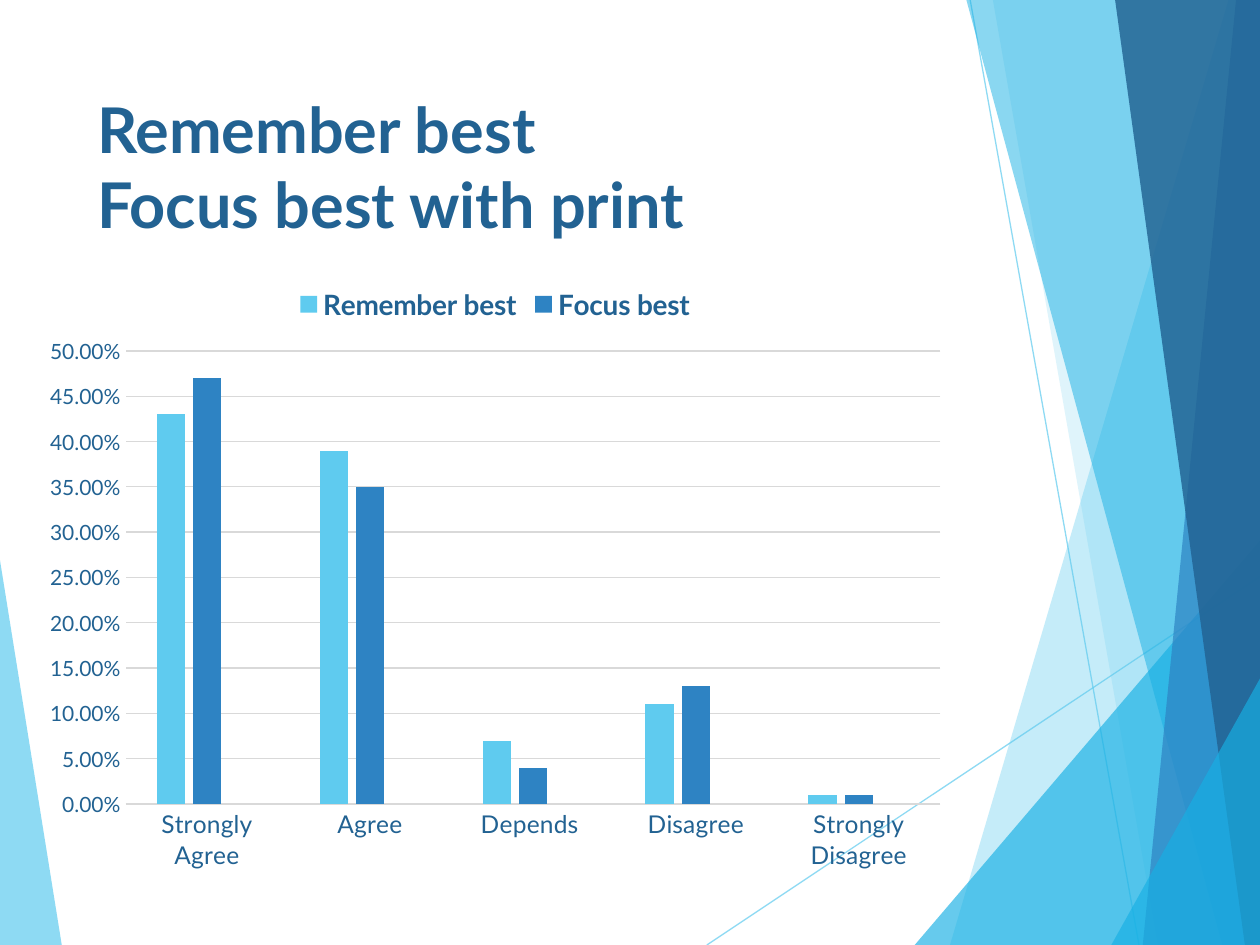
from collections import namedtuple

from lxml import etree
from pptx import Presentation
from pptx.chart.data import CategoryChartData
from pptx.dml.color import RGBColor
from pptx.enum.chart import XL_CHART_TYPE, XL_LEGEND_POSITION, XL_TICK_MARK
from pptx.enum.shapes import MSO_CONNECTOR
from pptx.enum.text import MSO_ANCHOR, PP_ALIGN
from pptx.oxml import parse_xml
from pptx.oxml.ns import nsdecls, qn
from pptx.util import Inches, Pt

COLUMN_CLUSTERED = XL_CHART_TYPE.COLUMN_CLUSTERED
LEGEND_TOP = XL_LEGEND_POSITION.TOP
NO_TICK = XL_TICK_MARK.NONE
STRAIGHT = MSO_CONNECTOR.STRAIGHT
TOP, LEFT = MSO_ANCHOR.TOP, PP_ALIGN.LEFT

SKY = RGBColor(0x5F, 0xCB, 0xEF)
CYAN = RGBColor(0x17, 0xB0, 0xE4)
BLUE = RGBColor(0x2E, 0x83, 0xC3)
NAVY = RGBColor(0x22, 0x62, 0x92)
GREEN = RGBColor(0x42, 0xD0, 0xA2)
GRID_GREY = RGBColor(0xD9, 0xD9, 0xD9)
FONT = "Lato"

Box = namedtuple("Box", "left top width height")

# Background: corner points as shares of the slide, colour, opacity in percent
LEFT_FACET = ([(0, 0.593), (0.049, 1), (0, 1)], SKY, 70)
RIGHT_FACETS = [
    ([(0.975, 0), (0.754, 1), (1, 1), (1, 0)], SKY, 36),
    ([(0.788, 0), (0.919, 1), (1, 1), (1, 0)], SKY, 20),
    ([(0.726, 1), (1, 0.572), (1, 1)], CYAN, 66),
    ([(0.767, 0), (0.97, 1), (1, 1), (1, 0)], CYAN, 50),
    ([(0.981, 0), (0.907, 1), (1, 1), (1, 0)], BLUE, 70),
    ([(0.885, 0), (0.988, 1), (1, 1), (1, 0)], NAVY, 82),
    ([(0.882, 1), (1, 0.718), (1, 1)], CYAN, 66),
]
RAYS = [((0.561, 1), (1, 0.61)), ((0.77, 0), (0.904, 1))]

# Survey results
ANSWERS = ["Strongly Agree", "Agree", "Depends ", "Disagree", "Strongly Disagree"]
RESULTS = [
    ("Remember best", [0.43, 0.39, 0.07, 0.11, 0.01], SKY),
    ("Focus best", [0.47, 0.35, 0.04, 0.13, 0.01], BLUE),
    ("Series 3", [None] * 5, GREEN),
]


def place(box, point):
    return (int(box.left + point[0] * box.width), int(box.top + point[1] * box.height))


def share(box, left, top, width, height):
    return Box(*place(box, (left, top)), int(width * box.width), int(height * box.height))


def set_opacity(shape, percent):
    for colour in shape._element.spPr.iter(qn("a:srgbClr")):
        etree.SubElement(colour, qn("a:alpha"), val=str(percent * 1000))


def style_font(font, size, colour, bold=False):
    font.name, font.size, font.bold = FONT, Pt(size), bold
    font.color.rgb = colour


def add_facet(slide, box, points, colour, opacity):
    start, *others = [place(box, point) for point in points]
    builder = slide.shapes.build_freeform(*start)
    builder.add_line_segments(others, close=True)
    facet = builder.convert_to_shape()
    facet.shadow.inherit = False
    facet.fill.solid()
    facet.fill.fore_color.rgb = colour
    facet.line.fill.background()
    set_opacity(facet, opacity)


def add_ray(slide, box, start, end):
    ray = slide.shapes.add_connector(STRAIGHT, *place(box, start), *place(box, end))
    ray.line.color.rgb = SKY
    ray.line.width = Pt(0.75)
    set_opacity(ray, 70)
    etree.SubElement(ray._element.spPr, qn("a:effectLst"))


def add_background(slide, box):
    add_facet(slide, box, *LEFT_FACET)
    for start, end in RAYS:
        add_ray(slide, box, start, end)
    for facet in RIGHT_FACETS:
        add_facet(slide, box, *facet)


def add_title(slide, box):
    title = slide.shapes.title
    title.left, title.top, title.width, title.height = box
    frame = title.text_frame
    frame.text = "Remember best\vFocus best with print"
    frame.word_wrap = True
    frame.vertical_anchor = TOP
    para = frame.paragraphs[0]
    para.alignment = LEFT
    para.line_spacing = 1.0
    for span in para.runs:
        style_font(span.font, 36, NAVY, bold=True)
    # Bring the title in front of the background
    slide.shapes._spTree.append(title._element)


def style_axes(chart):
    category_axis, value_axis = chart.category_axis, chart.value_axis
    for axis, size in ((category_axis, 14), (value_axis, 12)):
        axis.major_tick_mark = axis.minor_tick_mark = NO_TICK
        style_font(axis.tick_labels.font, size, NAVY)
    value_axis.minimum_scale, value_axis.maximum_scale = 0, 0.5
    value_axis.major_unit = 0.05
    value_axis.tick_labels.number_format = "0.00%"
    value_axis.tick_labels.number_format_is_linked = False
    value_axis.format.line.fill.background()
    for line in (category_axis.format.line, value_axis.major_gridlines.format.line):
        line.color.rgb = GRID_GREY
        line.width = Pt(0.75)


def style_legend(chart, hidden_entry):
    chart.has_legend = True
    legend = chart.legend
    legend.position = LEGEND_TOP
    legend.include_in_layout = False
    style_font(legend.font, 16, NAVY, bold=True)
    entry = parse_xml(
        f'<c:legendEntry {nsdecls("c")}><c:idx val="{hidden_entry}"/>'
        '<c:delete val="1"/></c:legendEntry>'
    )
    legend._element.find(qn("c:legendPos")).addnext(entry)


def add_results_chart(slide, box):
    data = CategoryChartData(number_format="0.00%")
    data.categories = ANSWERS
    for name, values, _ in RESULTS:
        data.add_series(name, values)
    chart = slide.shapes.add_chart(COLUMN_CLUSTERED, *box, data).chart
    chart.has_title = False
    chart.font.name, chart.font.size = FONT, Pt(10)

    plot = chart.plots[0]
    plot.vary_by_categories = False
    plot.gap_width, plot.overlap = 219, -27
    for series, (_, _, colour) in zip(plot.series, RESULTS):
        series.format.fill.solid()
        series.format.fill.fore_color.rgb = colour
    style_axes(chart)
    style_legend(chart, hidden_entry=2)


def main():
    deck = Presentation()
    deck.slide_width, deck.slide_height = Inches(10), Inches(7.5)
    slide = deck.slides.add_slide(deck.slide_layouts[5])
    page = Box(0, 0, deck.slide_width, deck.slide_height)

    add_background(slide, page)
    add_title(slide, share(page, 0.067, 0.089, 0.694, 0.192))
    add_results_chart(slide, share(page, 0.025, 0.289, 0.736, 0.644))
    deck.save("out.pptx")


if __name__ == "__main__":
    main()
